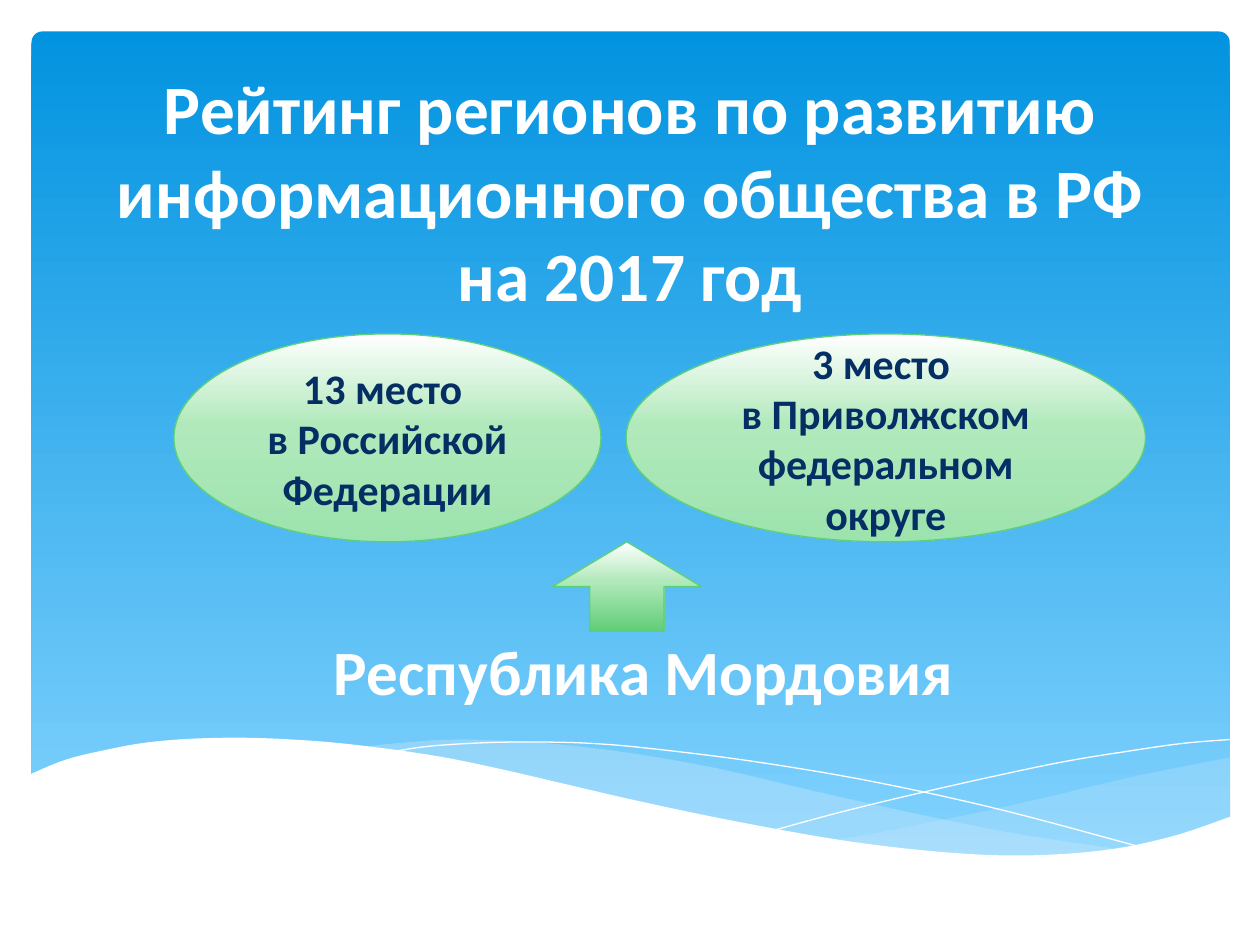
from lxml import etree
from pptx import Presentation
from pptx.dml.color import RGBColor
from pptx.enum import shapes, text
from pptx.oxml import ns
from pptx.util import Pt

WHITE = RGBColor(0xFF, 0xFF, 0xFF)
NAVY = RGBColor(0x05, 0x2E, 0x65)
GREEN = RGBColor(0x5B, 0xD0, 0x78)
MINT = RGBColor(0xB1, 0xE9, 0xBB)
PALE_GREEN = RGBColor(0x9D, 0xE3, 0xAE)
LEAF = RGBColor(0x61, 0xCD, 0x78)
SKY_TOP = RGBColor(0x02, 0x93, 0xE0)
SKY_BOTTOM = RGBColor(0x83, 0xD3, 0xFE)
MIST = RGBColor(0xC6, 0xE7, 0xFC)


def add_gradient_shape(kind, left, top, width, height, stops, outline=None):
    shape = page.shapes.add_shape(kind, Pt(left), Pt(top), Pt(width), Pt(height))
    shape.shadow.inherit = False
    shape.fill.gradient()
    shape.fill.gradient_angle = 270
    stop_list = shape._element.spPr.find(".//" + ns.qn("a:gsLst"))
    for stop in list(stop_list):
        stop_list.remove(stop)
    for percent, color in stops:
        stop = etree.SubElement(stop_list, ns.qn("a:gs"), pos=str(percent * 1000))
        etree.SubElement(stop, ns.qn("a:srgbClr"), val=str(color))
    if outline is None:
        shape.line.fill.background()
    else:
        shape.line.color.rgb = outline
        shape.line.width = Pt(0.75)
    return shape


def write_text(box, lines, size, color, anchor):
    frame = box.text_frame
    frame.word_wrap = True
    frame.vertical_anchor = anchor
    for index, line in enumerate(lines):
        para = frame.paragraphs[0] if index == 0 else frame.add_paragraph()
        para.alignment = text.PP_ALIGN.CENTER
        span = para.add_run()
        span.text = line
        span.font.name = "Calibri"
        span.font.size = Pt(size)
        span.font.bold = True
        span.font.color.rgb = color


deck = Presentation()
deck.slide_width, deck.slide_height = Pt(720), Pt(540)
page = deck.slides.add_slide(deck.slide_layouts[6])

sky = add_gradient_shape(shapes.MSO_SHAPE.ROUNDED_RECTANGLE, 18, 18, 684.7, 475.2,
                         [(0, SKY_TOP), (100, SKY_BOTTOM)])
sky.adjustments[0] = 0.013

right_ribbon = [(703.4, 432.7), (673.9, 438.5), (642.2, 445), (600.5, 455),
                (561.6, 463.7), (509, 474.5), (476.6, 480.2)]
right_ribbon_base = [(527.8, 486.7), (578.9, 489.6), (628.6, 486.7),
                     (668.9, 478.8), (703.4, 467.3)]
long_ribbon = [(643.7, 486), (581.8, 476.6), (534.2, 467.3), (481.7, 455.8),
               (453.6, 449.3), (410.4, 439.2), (370.8, 432), (334.8, 427),
               (302.4, 424.1), (260.6, 422.6), (226.1, 424.8), (206.6, 427)]
long_ribbon_base = [(261.4, 434.9), (324, 449.3), (408.2, 468), (479.5, 481),
                    (548.6, 488.9), (596.9, 489.6)]
falling_line = [(223.2, 429.8), (247.7, 426.2), (289.4, 424.1), (337.7, 424.8),
                (383.8, 429.1), (438.5, 436.3), (501.1, 447.1), (573.1, 463),
                (653.8, 484.6)]
rising_line = [(442.1, 474.5), (484.6, 463), (539.3, 450), (602.6, 436.3),
               (645.8, 429.1), (676.1, 424.8), (702.7, 422.6)]
wave = [(703.4, 466.6), (669.6, 478), (630, 486), (582.5, 488.9), (535.7, 486.7),
        (481, 480.2), (416.9, 468.7), (362.2, 457.2), (321.8, 447.8),
        (281.5, 438.5), (244.8, 431.3), (195.1, 424.8), (151.9, 421.9),
        (115.9, 421.9), (85.7, 424.1), (61.2, 428.4), (37.4, 434.2), (16.6, 442.8)]
wave_base = [(16.6, 526.3), (703.4, 526.3)]

for crest, base, color, opacity in [
    (right_ribbon, right_ribbon_base, MIST, 29),
    (long_ribbon, long_ribbon_base, MIST, 40),
    (falling_line, [], None, 100),
    (rising_line, [], None, 100),
    (wave, wave_base, WHITE, 100),
]:
    padded = [crest[0], *crest, crest[-1]]
    outline = [crest[0]]
    for before, start, end, after in zip(padded, padded[1:], padded[2:], padded[3:]):
        for step in range(1, 7):
            t = step / 6
            outline.append(tuple(
                b + (c - a) * t / 2 + (2 * a - 5 * b + 4 * c - d) * t ** 2 / 2
                + (3 * b - a - 3 * c + d) * t ** 3 / 2
                for a, b, c, d in zip(before, start, end, after)))
    points = [(Pt(x), Pt(y)) for x, y in outline + base]
    builder = page.shapes.build_freeform(*points[0])
    builder.add_line_segments(points[1:], close=bool(base))
    band = builder.convert_to_shape()
    band.shadow.inherit = False
    if color is None:
        band.fill.background()
        band.line.color.rgb = WHITE
        band.line.width = Pt(0)
    else:
        band.fill.solid()
        band.fill.fore_color.rgb = color
        band.line.fill.background()
        if opacity < 100:
            tint = band._element.spPr.find(ns.qn("a:solidFill"))[0]
            etree.SubElement(tint, ns.qn("a:alpha"), val=str(opacity * 1000))

for lines, left, top, width, height, size, anchor in [
    (["Рейтинг регионов по развитию информационного общества в РФ на 2017 год"],
     54, 43.2, 612, 140.4, 39.6, text.MSO_ANCHOR.BOTTOM),
    (["Республика Мордовия"], 115.9, 357.8, 504, 108, 36, text.MSO_ANCHOR.TOP),
]:
    box = page.shapes.add_textbox(Pt(left), Pt(top), Pt(width), Pt(height))
    write_text(box, lines, size, WHITE, anchor)

for lines, left, width in [
    (["13 место ", "в Российской Федерации"], 99.4, 244),
    (["3 место ", "в Приволжском федеральном округе"], 357.8, 296.8),
]:
    oval = add_gradient_shape(shapes.MSO_SHAPE.OVAL, left, 190.8, width, 118.8,
                              [(0, WHITE), (44, MINT), (100, PALE_GREEN)], GREEN)
    write_text(oval, lines, 24, NAVY, text.MSO_ANCHOR.MIDDLE)

add_gradient_shape(shapes.MSO_SHAPE.UP_ARROW, 315.7, 309.6, 85, 51.1,
                   [(0, WHITE), (44, MINT), (100, LEAF)], GREEN)

deck.save("out.pptx")
